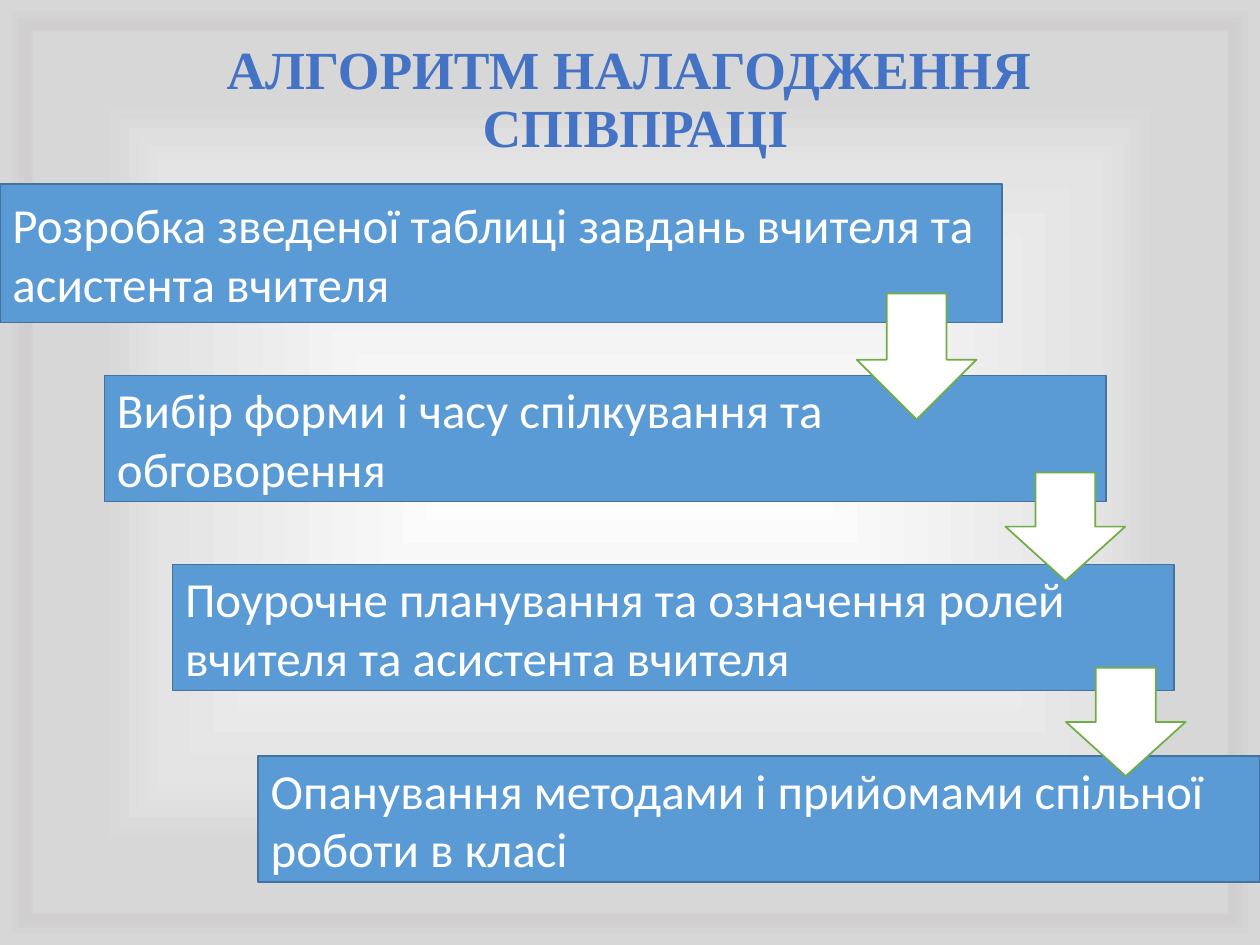
from dataclasses import dataclass

import lxml.etree
import pptx
import pptx.dml.color
import pptx.enum.shapes
import pptx.enum.text
import pptx.oxml.ns
import pptx.util

Inches = pptx.util.Inches
Shapes = pptx.enum.shapes.MSO_SHAPE
STEP_WIDTH = 7.95
ARROW_WIDTH = 0.95


@dataclass
class Step:
    left: float
    top: float
    height: float
    text: str


@dataclass
class Arrow:
    left: float
    top: float
    height: float


STEPS = [
    Step(0, 1.46, 1.1, "Розробка зведеної таблиці завдань вчителя та асистента вчителя"),
    Step(0.83, 2.98, 1, "Вибір форми і часу спілкування та обговорення"),
    Step(1.37, 4.48, 1, "Поурочне планування та означення ролей вчителя та асистента вчителя"),
    Step(2.05, 6, 1, "Опанування методами і прийомами спільної роботи в класі"),
]
ARROWS = [Arrow(6.8, 2.33, 1), Arrow(7.98, 3.75, 0.86), Arrow(8.46, 5.3, 0.86)]
BACKGROUND_STOPS = [
    (0, "FFFFFF"), (65, "E4E4E4"), (79, "D7D7D7"),
    (93, "D7D7D7"), (94, "D0CECE"), (99, "D7D7D7"),
]


def color(value: str) -> pptx.dml.color.RGBColor:
    return pptx.dml.color.RGBColor.from_string(value)


def add_element(parent, tag: str, **attributes: str):
    return lxml.etree.SubElement(parent, pptx.oxml.ns.qn(tag), attributes)


def paint_background(page) -> None:
    page.background.fill.gradient()
    gradient = page.element.find(".//" + pptx.oxml.ns.qn("a:gradFill"))
    for child in list(gradient):
        gradient.remove(child)
    stops = add_element(gradient, "a:gsLst")
    for percent, value in BACKGROUND_STOPS:
        stop = add_element(stops, "a:gs", pos=str(percent * 1000))
        add_element(stop, "a:srgbClr", val=value)
    shading = add_element(gradient, "a:path", path="shape")
    add_element(shading, "a:fillToRect", l="50000", t="50000", r="50000", b="50000")


def format_paragraph(para, font: str, size: float, value: str, alignment) -> None:
    para.alignment = alignment
    para.font.name = font
    para.font.size = pptx.util.Pt(size)
    para.font.color.rgb = color(value)


def write_title(page) -> None:
    title = page.shapes.title
    title.left, title.top = Inches(0.68), Inches(0.21)
    title.width, title.height = Inches(8.62), Inches(1.1)
    frame = title.text_frame
    frame.auto_size = pptx.enum.text.MSO_AUTO_SIZE.NONE
    frame.vertical_anchor = pptx.enum.text.MSO_ANCHOR.BOTTOM
    para = frame.paragraphs[0]
    para.text = "АЛГОРИТМ НАЛАГОДЖЕННЯ\v СПІВПРАЦІ"
    para.line_spacing = 0.9
    format_paragraph(para, "Times New Roman", 30.6, "4472C4", pptx.enum.text.PP_ALIGN.CENTER)
    para.font.bold = True


def add_box(page, kind, left: float, top: float, width: float, height: float,
            fill: str, line: str):
    box = page.shapes.add_shape(kind, Inches(left), Inches(top), Inches(width), Inches(height))
    box.shadow.inherit = False
    box.fill.solid()
    box.fill.fore_color.rgb = color(fill)
    box.line.color.rgb = color(line)
    box.line.width = pptx.util.Pt(1)
    return box


def draw_step(page, step: Step) -> None:
    box = add_box(page, Shapes.RECTANGLE, step.left, step.top, STEP_WIDTH, step.height,
                  "5B9BD5", "43739E")
    frame = box.text_frame
    frame.word_wrap = True
    frame.vertical_anchor = pptx.enum.text.MSO_ANCHOR.MIDDLE
    para = frame.paragraphs[0]
    para.text = step.text
    format_paragraph(para, "Calibri", 28, "FFFFFF", pptx.enum.text.PP_ALIGN.LEFT)


def draw_arrow(page, arrow: Arrow) -> None:
    add_box(page, Shapes.DOWN_ARROW, arrow.left, arrow.top, ARROW_WIDTH, arrow.height,
            "FFFFFF", "70AD47")


def main() -> None:
    deck = pptx.Presentation()
    deck.slide_width, deck.slide_height = Inches(10), Inches(7.5)
    page = deck.slides.add_slide(deck.slide_layouts.get_by_name("Title Only"))
    paint_background(page)
    write_title(page)
    for step in STEPS:
        draw_step(page, step)
    for arrow in ARROWS:
        draw_arrow(page, arrow)
    deck.save("out.pptx")


if __name__ == "__main__":
    main()
